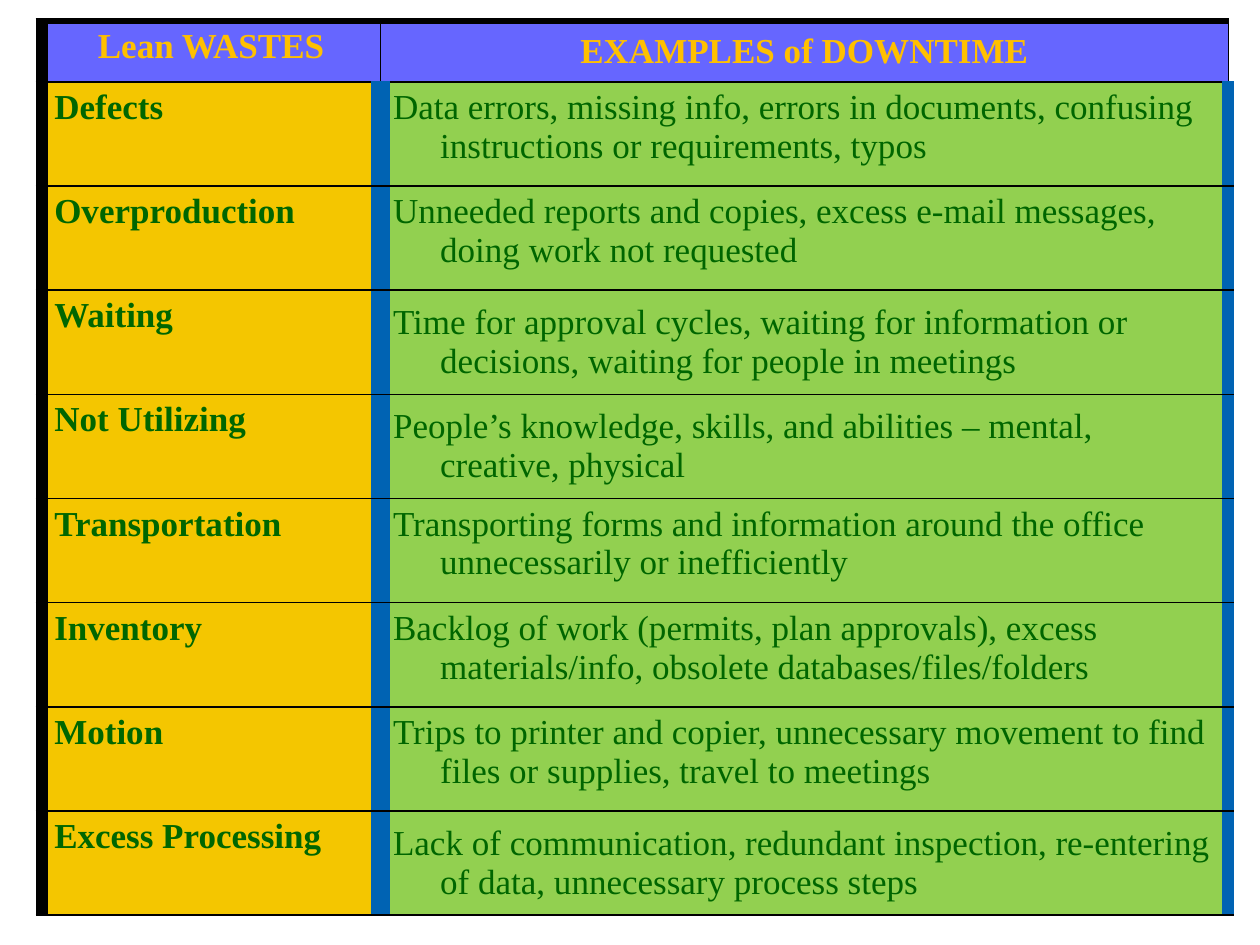
from typing import NamedTuple

from lxml.etree import SubElement
from pptx import Presentation
from pptx.dml.color import RGBColor
from pptx.enum.text import MSO_ANCHOR, PP_ALIGN
from pptx.oxml.ns import qn
from pptx.util import Cm, Pt

BLACK, BLUE = "000000", "0063B3"
VIOLET, GOLD = "6666FF", "FFC000"
YELLOW, LIME, GREEN = "F4C600", "92D050", "006600"
COLUMN_WIDTHS = (6.83, 17.09)
HEADER_HEIGHT, ROW_HEIGHT = 1.22, 2.1
INDENT = Cm(0.95)


class Border(NamedTuple):
    color: str
    width: float


class CellStyle(NamedTuple):
    fill: str
    color: str
    bold: bool
    align: PP_ALIGN
    left: Border
    right: Border
    top: Border


class Waste(NamedTuple):
    name: str
    examples: str
    middle: bool = False


THIN, HAIRLINE = Border(BLACK, 1), Border(BLACK, 0.75)
BLACK_BAR, TOP_BAR = Border(BLACK, 8), Border(BLACK, 4)
BLUE_BAR, RIGHT_BAR = Border(BLUE, 12), Border(BLUE, 8)

NAME_HEADER = CellStyle(VIOLET, GOLD, True, PP_ALIGN.CENTER, BLACK_BAR, HAIRLINE, TOP_BAR)
EXAMPLES_HEADER = NAME_HEADER._replace(left=HAIRLINE)
NAME_CELL = CellStyle(YELLOW, GREEN, True, PP_ALIGN.LEFT, BLACK_BAR, BLUE_BAR, THIN)
EXAMPLES_CELL = CellStyle(LIME, GREEN, False, PP_ALIGN.LEFT, BLUE_BAR, RIGHT_BAR, THIN)

HEADER = Waste("Lean WASTES", "EXAMPLES of DOWNTIME", True)
WASTES = [
    Waste("Defects", "Data errors, missing info, errors in documents, "
          "confusing instructions or requirements, typos"),
    Waste("Overproduction", "Unneeded reports and copies, excess e-mail messages, "
          "doing work not requested"),
    Waste("Waiting", "Time for approval cycles, waiting for information or decisions, "
          "waiting for people in meetings", True),
    Waste("Not Utilizing", "People’s knowledge, skills, and abilities – mental, "
          "creative, physical", True),
    Waste("Transportation", "Transporting forms and information around the office "
          "unnecessarily or inefficiently"),
    Waste("Inventory", "Backlog of work (permits, plan approvals), excess materials/info, "
          "obsolete databases/files/folders"),
    Waste("Motion", "Trips to printer and copier, unnecessary movement to find files "
          "or supplies, travel to meetings"),
    Waste("Excess Processing", "Lack of communication, redundant inspection, "
          "re-entering of data, unnecessary process steps", True),
]


def rgb(color: str) -> RGBColor:
    return RGBColor.from_string(color)


def set_borders(cell, style: CellStyle) -> None:
    properties = cell._tc.get_or_add_tcPr()
    sides = {"a:lnL": style.left, "a:lnR": style.right, "a:lnT": style.top, "a:lnB": THIN}
    for position, (tag, border) in enumerate(sides.items()):
        line = SubElement(properties, qn(tag), w=str(Pt(border.width)))
        fill = SubElement(line, qn("a:solidFill"))
        SubElement(fill, qn("a:srgbClr"), val=border.color)
        properties.insert(position, line)  # borders come before the fill


def fill_cell(cell, text: str, style: CellStyle, middle: bool = False) -> None:
    cell.fill.solid()
    cell.fill.fore_color.rgb = rgb(style.fill)
    set_borders(cell, style)
    cell.vertical_anchor = MSO_ANCHOR.MIDDLE if middle else MSO_ANCHOR.TOP
    cell.text_frame.text = text
    para = cell.text_frame.paragraphs[0]
    para.alignment = style.align
    # Hanging indent
    para_properties = para._p.get_or_add_pPr()
    para_properties.set("marL", str(INDENT))
    para_properties.set("indent", str(-INDENT))
    font = para.runs[0].font
    font.name, font.size, font.bold = "Times New Roman", Pt(20), style.bold
    font.color.rgb = rgb(style.color)


def main() -> None:
    deck = Presentation()
    deck.slide_width, deck.slide_height = Cm(25.4), Cm(19.05)
    page = deck.slides.add_slide(deck.slide_layouts[6])

    # Table grid
    rows = [HEADER, *WASTES]
    height = HEADER_HEIGHT + ROW_HEIGHT * len(WASTES)
    table = page.shapes.add_table(len(rows), 2, Cm(0.84), Cm(0.43),
                                  Cm(sum(COLUMN_WIDTHS)), Cm(height)).table
    for column, width in zip(table.columns, COLUMN_WIDTHS):
        column.width = Cm(width)

    # Header and one row for each waste
    for index, waste in enumerate(rows):
        is_header = index == 0
        table.rows[index].height = Cm(HEADER_HEIGHT if is_header else ROW_HEIGHT)
        fill_cell(table.cell(index, 0), waste.name, NAME_HEADER if is_header else NAME_CELL)
        fill_cell(table.cell(index, 1), waste.examples,
                  EXAMPLES_HEADER if is_header else EXAMPLES_CELL, waste.middle)

    deck.save("out.pptx")


if __name__ == "__main__":
    main()
